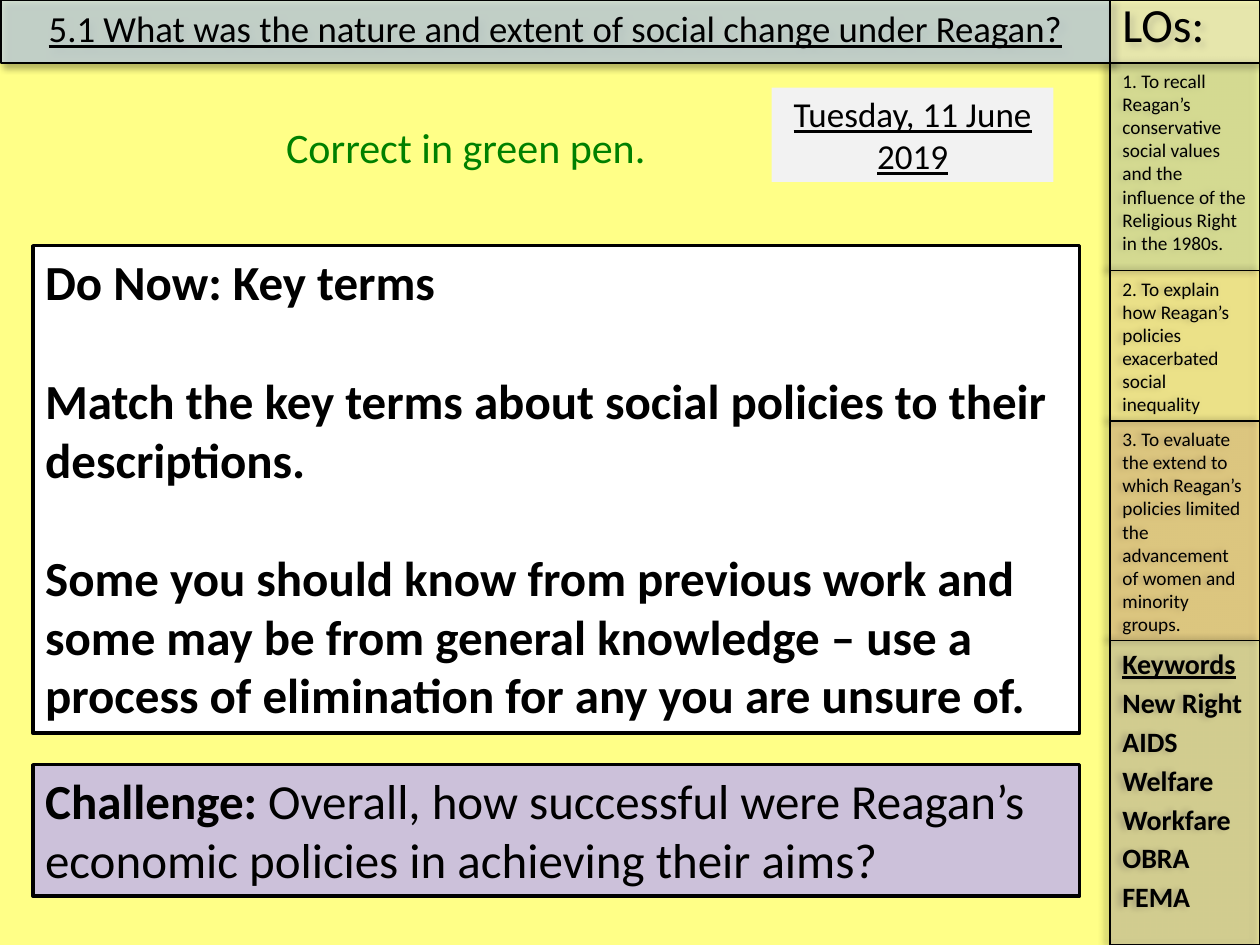
from dataclasses import dataclass
from typing import Optional

from lxml.etree import SubElement
from pptx import Presentation
from pptx.dml.color import RGBColor
from pptx.enum.shapes import MSO_SHAPE
from pptx.enum.text import MSO_ANCHOR, PP_ALIGN
from pptx.oxml.ns import qn
from pptx.util import Pt

COLORS = {
    "page": "FFFF87", "black": "000000", "white": "FFFFFF", "green": "008000",
    "title": "C6D9F1", "recall": "D7E4BD", "explain": "FCD5B5",
    "evaluate": "D99694", "keywords": "B3A2C7", "challenge": "CCC1DA",
    "date": "F2F2F2",
}
SIDE_X = 634.3
SIDE_W = 720 - SIDE_X
BAR_H = 36
MAIN_X, MAIN_W = 18.7, 598.3


@dataclass
class Run:
    text: str
    size: float
    bold: bool = False
    underline: bool = False
    color: str = "black"


@dataclass
class Box:
    left: float
    top: float
    width: float
    height: float
    paras: list[list[Run]]
    fill: Optional[str] = None
    alpha: int = 100
    line: float = 0
    shadow: Optional[int] = None
    align: PP_ALIGN = PP_ALIGN.LEFT
    anchor: MSO_ANCHOR = MSO_ANCHOR.TOP
    gap: float = 0
    spacing: float = 1


def rgb(name: str) -> RGBColor:
    return RGBColor.from_string(COLORS[name])


def set_alpha(color, percent: int) -> None:
    SubElement(color, qn("a:alpha"), val=str(percent * 1000))


def add_shadow(sp, angle: int) -> None:
    effects = sp._element.spPr.find(qn("a:effectLst"))
    shadow = SubElement(effects, qn("a:outerShdw"), blurRad=str(Pt(4)),
                        dist=str(Pt(3)), dir=str(angle * 60000),
                        algn="ctr", rotWithShape="0")
    color = SubElement(shadow, qn("a:srgbClr"), val=COLORS["black"])
    set_alpha(color, 40)


def add_text(tf, box: Box) -> None:
    tf.word_wrap = True
    tf.vertical_anchor = box.anchor
    for i, runs in enumerate(box.paras):
        p = tf.add_paragraph() if i else tf.paragraphs[0]
        p.alignment = box.align
        p.line_spacing = box.spacing
        if i:
            p.space_before = Pt(box.gap)
        for run in runs:
            r = p.add_run()
            r.text = run.text
            r.font.name = "Calibri"
            r.font.size = Pt(run.size)
            r.font.bold = run.bold
            r.font.underline = run.underline
            r.font.color.rgb = rgb(run.color)


def draw_box(s, box: Box) -> None:
    place = [Pt(v) for v in (box.left, box.top, box.width, box.height)]
    if box.fill is None:
        sp = s.shapes.add_textbox(*place)
    else:
        sp = s.shapes.add_shape(MSO_SHAPE.RECTANGLE, *place)
        sp.shadow.inherit = False
        sp.fill.solid()
        sp.fill.fore_color.rgb = rgb(box.fill)
        if box.alpha < 100:
            set_alpha(sp._element.spPr.find(qn("a:solidFill"))[0], box.alpha)
        if box.line:
            sp.line.color.rgb = rgb("black")
            sp.line.width = Pt(box.line)
        else:
            sp.line.fill.background()
        if box.shadow is not None:
            add_shadow(sp, box.shadow)
    add_text(sp.text_frame, box)


def side_box(top: float, bottom: float, fill: str, alpha: int,
             paras: list[list[Run]], gap: float = 0) -> Box:
    return Box(SIDE_X, top, SIDE_W, bottom - top, paras, fill, alpha,
               line=0.75, shadow=180, gap=gap)


def main() -> None:
    prs = Presentation()
    prs.slide_width, prs.slide_height = Pt(720), Pt(540)
    s = prs.slides.add_slide(prs.slide_layouts[6])
    s.background.fill.solid()
    s.background.fill.fore_color.rgb = rgb("page")

    terms = ["New Right", "AIDS", "Welfare", "Workfare", "OBRA", "FEMA"]
    keywords = [[Run("Keywords", 16, True, True)]]
    keywords += [[Run(term, 16, True)] for term in terms]
    do_now = [
        "Do Now: Key terms",
        "Match the key terms about social policies to their descriptions.",
        "Some you should know from previous work and some may be from general "
        "knowledge – use a process of elimination for any you are unsure of.",
    ]
    boxes = [
        side_box(BAR_H, 154.7, "recall", 44, [[Run(
            "1. To recall Reagan’s conservative social values and the "
            "influence of the Religious Right in the 1980s.", 11)]]),
        side_box(154.7, 240.7, "explain", 25, [[Run(
            "2. To explain how Reagan’s policies exacerbated social "
            "inequality", 11)]]),
        Box(0.5, 0, SIDE_X - 0.5, BAR_H, [[Run(
            "5.1 What was the nature and extent of social change under "
            "Reagan?", 21, underline=True)]],
            "title", 71, line=0.75, shadow=45, align=PP_ALIGN.CENTER),
        Box(SIDE_X, 0, SIDE_W, BAR_H, [[Run("LOs:", 27.2)]],
            "white", 42, line=0.75, shadow=45, spacing=0.8),
        side_box(240.7, 366, "evaluate", 33, [[Run(
            "3. To evaluate the extend to which Reagan’s policies limited "
            "the advancement of women and minority groups.", 11)]]),
        side_box(366, 540, "keywords", 31, keywords, gap=3),
        Box(MAIN_X, 140.4, MAIN_W, 278.6,
            [[Run(text, 28, True)] for text in do_now],
            "white", line=2, gap=34),
        Box(MAIN_X, 437, MAIN_W, 75, [[
            Run("Challenge: ", 28, True),
            Run("Overall, how successful were Reagan’s economic policies in "
                "achieving their aims?", 28)]], "challenge", line=2),
        Box(441, 50, 161, 54,
            [[Run("Tuesday, 11 June 2019", 20, underline=True)]], "date",
            align=PP_ALIGN.CENTER, anchor=MSO_ANCHOR.MIDDLE),
        Box(156, 65.8, 220, 36,
            [[Run("Correct in green pen.", 24, color="green")]],
            align=PP_ALIGN.RIGHT),
    ]
    for box in boxes:
        draw_box(s, box)
    prs.save("out.pptx")


if __name__ == "__main__":
    main()
